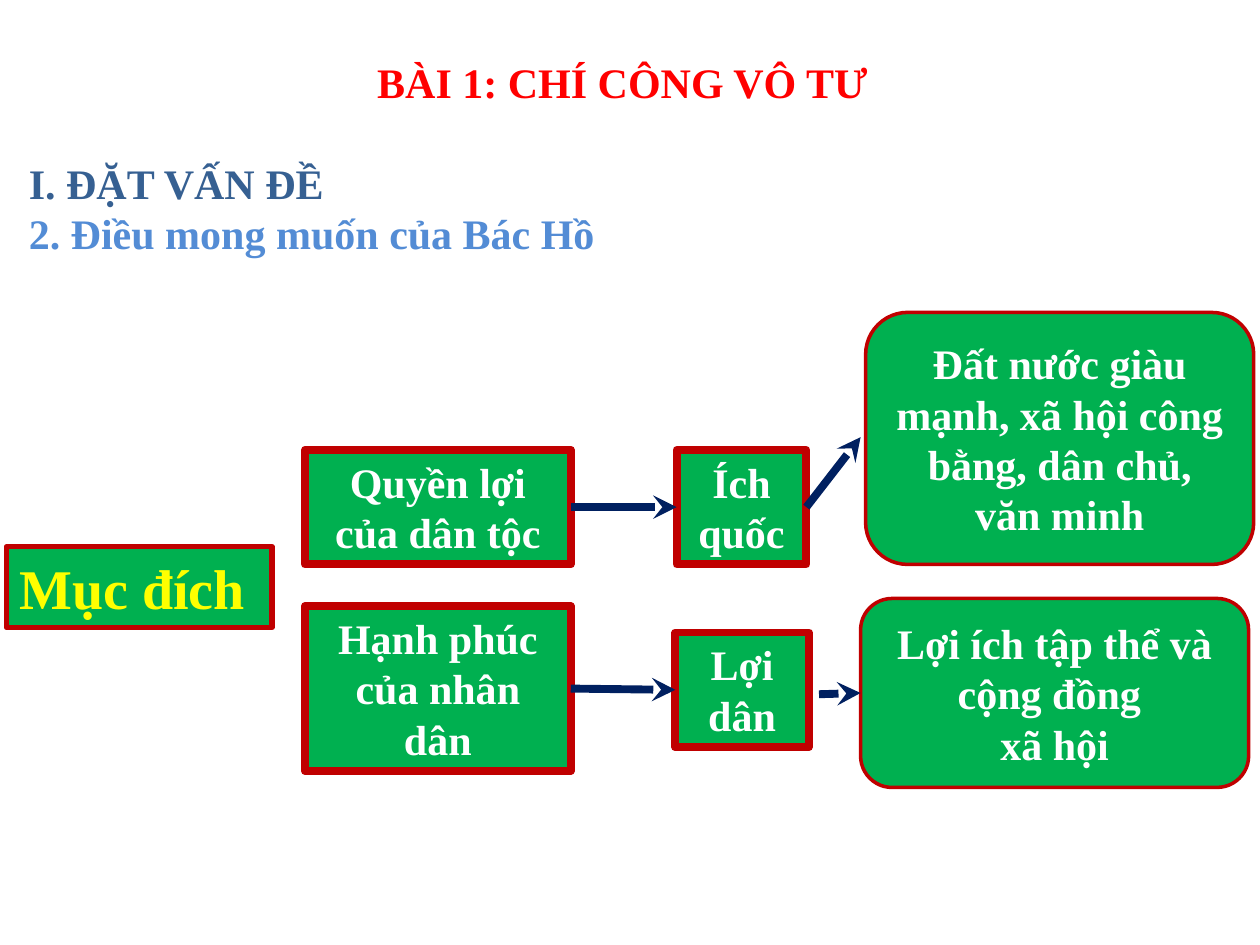
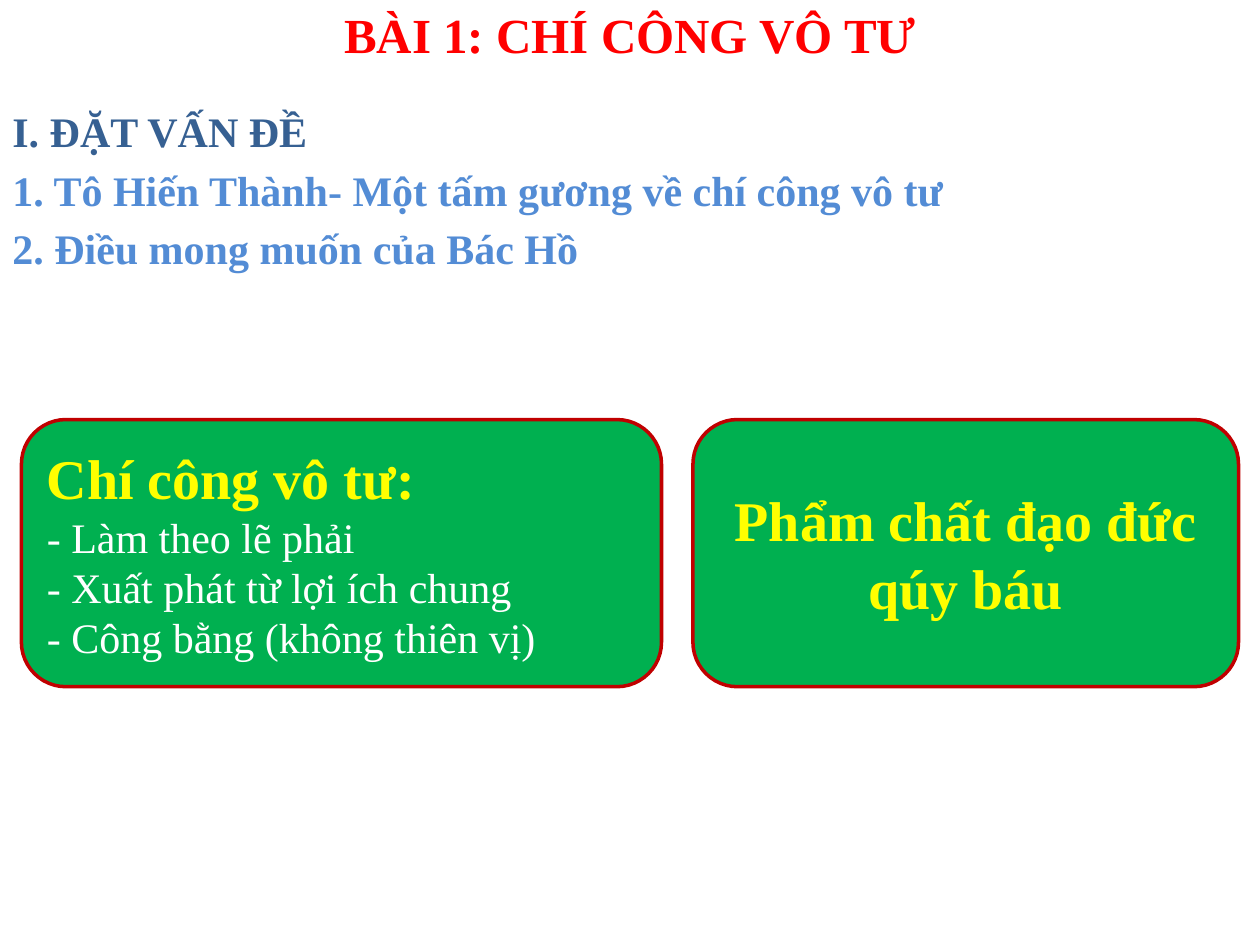
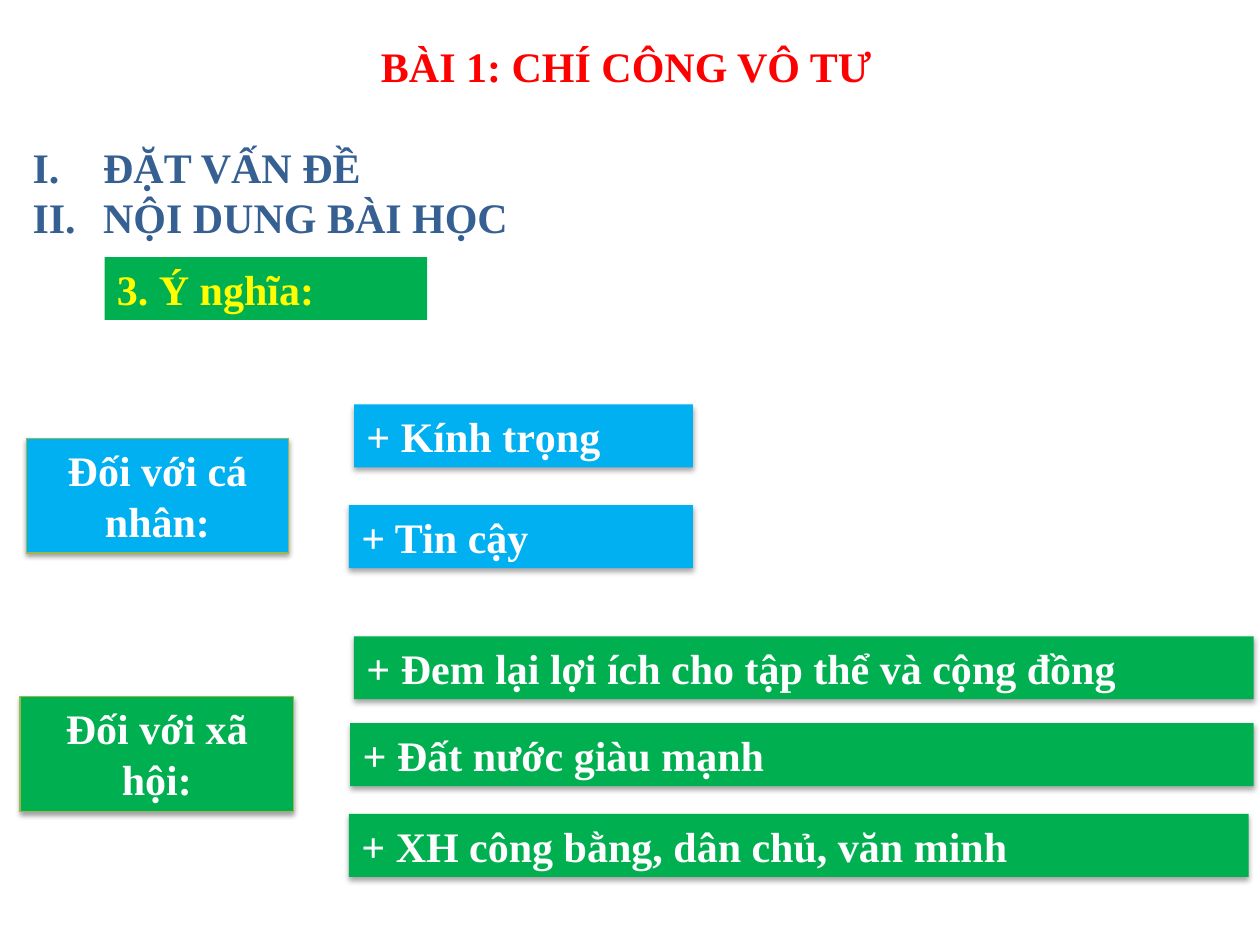
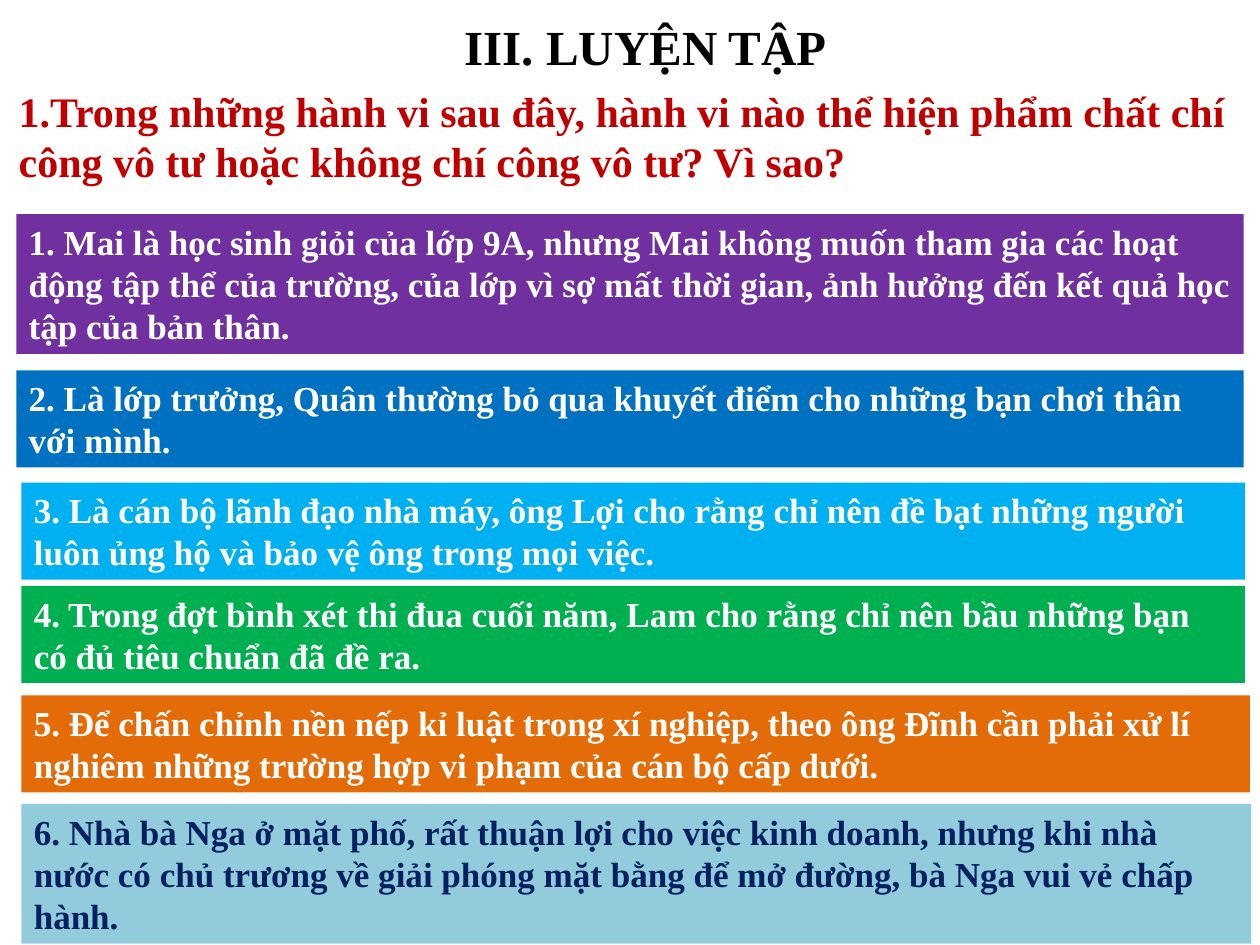
from dataclasses import dataclass
from typing import NamedTuple

from lxml.etree import SubElement
from pptx import Presentation
from pptx.dml.color import RGBColor
from pptx.enum.shapes import MSO_CONNECTOR as Connector, MSO_SHAPE as Preset
from pptx.enum.text import MSO_ANCHOR as Anchor, MSO_AUTO_SIZE as AutoSize, PP_ALIGN as Align
from pptx.oxml.ns import qn
from pptx.util import Emu, Inches, Pt

# Shared look
FONT = "Times New Roman"
COLORS = {
    "white": "FFFFFF", "black": "000000", "red": "FF0000", "crimson": "C00000",
    "yellow": "FFFF00", "green": "00B050", "sky": "00B0F0", "blue": "0070C0",
    "navy": "002060", "section": "366092", "topic": "538CD5", "olive": "97B853",
    "purple": "7030A0", "orange": "E36C09", "pale": "92CCDC",
}
SLIDE_WIDTH, SLIDE_HEIGHT = Inches(10), Inches(7.5)
COLUMNS, ROWS = 100, 75
COLUMN, ROW = SLIDE_WIDTH / COLUMNS, SLIDE_HEIGHT / ROWS
NUMBER_INDENT = Inches(0.56)
BLANK_LINE = 28.8  # height of one 24 pt line, in points
LESSON = "BÀI 1: CHÍ CÔNG VÔ TƯ"
PROBLEM = "ĐẶT VẤN ĐỀ"
WISH = "2. Điều mong muốn của Bác Hồ"


class Place(NamedTuple):
    """Left and width in columns, top and height in rows."""
    left: float
    top: float
    width: float
    height: float


class Point(NamedTuple):
    column: float
    row: float


class Outline(NamedTuple):
    color: str
    width: float


class Shadow(NamedTuple):
    distance: float
    opacity: int


@dataclass(frozen=True)
class Line:
    text: str
    color: str = "white"
    size: float = 24
    bold: bool = True
    align: Align = Align.LEFT
    space_before: float = 0
    numbered: bool = False


@dataclass(frozen=True)
class Box:
    place: Place
    lines: tuple[Line, ...]
    fill: str | None = "white"
    outline: Outline | None = None
    rounded: bool = False
    shadow: Shadow | None = None
    name: str = ""


@dataclass(frozen=True)
class Arrow:
    start: str | Point  # name of a box (its right side) or a free point
    end: str | Point    # name of a box (its left side) or a free point


THIN, MEDIUM, THICK = (Outline("crimson", width) for width in (2, 3, 4.5))
LABEL_EDGE = Outline("olive", 0.75)
LABEL_SHADOW, ITEM_SHADOW = Shadow(1.6, 38), Shadow(1.8, 35)


def rgb(name: str) -> RGBColor:
    return RGBColor.from_string(COLORS[name])


def across(columns: float) -> Emu:
    return Emu(round(columns * COLUMN))


def down(rows: float) -> Emu:
    return Emu(round(rows * ROW))


# Drawing
def add_number(paragraph) -> None:
    properties = paragraph._p.get_or_add_pPr()
    properties.set("marL", str(NUMBER_INDENT))
    properties.set("indent", str(-NUMBER_INDENT))
    color = SubElement(properties, qn("a:buClr"))
    SubElement(color, qn("a:srgbClr"), val=COLORS["section"])
    SubElement(properties, qn("a:buAutoNum"), type="romanUcPeriod")


def write_lines(text_frame, lines: tuple[Line, ...]) -> None:
    text_frame.text = "\n".join(line.text for line in lines)
    for paragraph, line in zip(text_frame.paragraphs, lines):
        paragraph.alignment = line.align
        paragraph.space_before = Pt(line.space_before)
        if line.numbered:
            add_number(paragraph)
        for run in paragraph.runs:
            run.font.name = FONT
            run.font.size = Pt(line.size)
            run.font.bold = line.bold
            run.font.color.rgb = rgb(line.color)


def add_shadow(shape, shadow: Shadow) -> None:
    effects = shape._element.spPr.find(qn("a:effectLst"))
    outer = SubElement(effects, qn("a:outerShdw"), blurRad=str(Pt(3.1)),
                       dist=str(Pt(shadow.distance)), dir="5400000", rotWithShape="0")
    color = SubElement(outer, qn("a:srgbClr"), val=COLORS["black"])
    SubElement(color, qn("a:alpha"), val=str(shadow.opacity * 1000))


def draw_box(slide, box: Box):
    left, top, width, height = box.place
    bounds = across(left), down(top), across(width), down(height)
    if box.fill is None:
        shape = slide.shapes.add_textbox(*bounds)
    else:
        preset = Preset.ROUNDED_RECTANGLE if box.rounded else Preset.RECTANGLE
        shape = slide.shapes.add_shape(preset, *bounds)
        shape.shadow.inherit = False
        shape.fill.solid()
        shape.fill.fore_color.rgb = rgb(box.fill)
        if box.outline:
            shape.line.color.rgb = rgb(box.outline.color)
            shape.line.width = Pt(box.outline.width)
        else:
            shape.line.fill.background()
        if box.shadow:
            add_shadow(shape, box.shadow)
    text_frame = shape.text_frame
    text_frame.word_wrap = True
    text_frame.auto_size = AutoSize.NONE if box.rounded else AutoSize.SHAPE_TO_FIT_TEXT
    text_frame.vertical_anchor = Anchor.MIDDLE if box.rounded else Anchor.TOP
    write_lines(text_frame, box.lines)
    return shape


def draw_arrow(slide, arrow: Arrow, shapes: dict) -> None:
    ends = [point if isinstance(point, Point) else Point(0, 0)
            for point in (arrow.start, arrow.end)]
    connector = slide.shapes.add_connector(
        Connector.STRAIGHT, *(length for point in ends
                              for length in (across(point.column), down(point.row))))
    if isinstance(arrow.start, str):
        connector.begin_connect(shapes[arrow.start], 3)
    if isinstance(arrow.end, str):
        connector.end_connect(shapes[arrow.end], 1)
    connector.line.color.rgb = rgb("navy")
    connector.line.width = Pt(4.5)
    properties = connector._element.spPr
    SubElement(properties.find(qn("a:ln")), qn("a:tailEnd"), type="stealth")
    SubElement(properties, qn("a:effectLst"))


def add_slide(presentation, boxes: list[Box], arrows: tuple[Arrow, ...] = ()) -> None:
    slide = presentation.slides.add_slide(presentation.slide_layouts[6])
    shapes = {box.name: draw_box(slide, box) for box in boxes}
    for arrow in arrows:
        draw_arrow(slide, arrow, shapes)


# Recurring kinds of box
def centered(text: str, color: str = "white", size: float = 24) -> Line:
    return Line(text, color, size, align=Align.CENTER)


def heading(place: Place, *lines: Line, size: float = 24) -> Box:
    return Box(place, (centered(LESSON, "red", size), *lines))


def step(name: str, place: Place, text: str) -> Box:
    return Box(place, (centered(text),), "green", THICK, name=name)


def card(place: Place, *lines: Line, name: str = "") -> Box:
    return Box(place, lines, "green", THIN, rounded=True, name=name)


def label(place: Place, text: str, fill: str) -> Box:
    return Box(place, (centered(text),), fill, LABEL_EDGE, shadow=LABEL_SHADOW)


def item(place: Place, text: str, fill: str) -> Box:
    return Box(place, (Line(text),), fill, shadow=ITEM_SHADOW)


def statement(place: Place, text: str, fill: str, color: str = "white") -> Box:
    return Box(place, (Line(text, color, 20),), fill)


# Slides
def add_purpose_slide(presentation) -> None:
    boxes = [
        heading(Place(1.3, 4, 96.2, 17.8),
                Line(f"I. {PROBLEM}", "section", space_before=BLANK_LINE),
                Line(WISH, "topic")),
        Box(Place(0.5, 43.4, 21.1, 6.4), (centered("Mục đích ", "yellow", 32),),
            "green", MEDIUM),
        step("nation", Place(24.2, 35.7, 21.1, 9.1), "Quyền lợi của dân tộc"),
        step("people", Place(24.2, 48.1, 21.1, 13.1), "Hạnh phúc của nhân dân"),
        step("country good", Place(53.7, 35.7, 10.3, 9.1), "Ích quốc"),
        step("people good", Place(53.6, 50.2, 10.6, 9.1), "Lợi dân"),
        card(Place(68.7, 24.8, 30.8, 20),
             centered("Đất nước giàu mạnh, xã hội công bằng, dân chủ, văn minh")),
        card(Place(68.3, 47.5, 30.8, 15),
             centered("Lợi ích tập thể và cộng đồng "), centered("xã hội"),
             name="community"),
    ]
    arrows = (
        Arrow("nation", "country good"),
        Arrow("people", "people good"),
        Arrow("country good", Point(68.3, 34.7)),
        Arrow(Point(65, 55.1), "community"),
    )
    add_slide(presentation, boxes, arrows)


def add_virtue_slide(presentation) -> None:
    traits = ("- Làm theo lẽ phải", "- Xuất phát từ lợi ích chung",
              "- Công bằng (không thiên vị)")
    add_slide(presentation, [
        card(Place(55, 33.3, 43.3, 21.2), centered("Phẩm chất đạo đức qúy báu", "yellow", 32)),
        card(Place(1.7, 33.3, 50.8, 21.2), Line("Chí công vô tư:", "yellow", 32),
             *(Line(trait, bold=False) for trait in traits)),
        Box(Place(0, 7.9, 30.8, 5), (Line(f"I. {PROBLEM}", "section"),)),
        heading(Place(0, -0.1, COLUMNS, 5.7), size=28),
        Box(Place(0, 12.6, COLUMNS, 5),
            (Line("1. Tô Hiến Thành- Một tấm gương về chí công vô tư", "topic"),)),
        Box(Place(0, 17.2, 60.6, 5), (Line(WISH, "topic"),)),
    ])


def add_meaning_slide(presentation) -> None:
    add_slide(presentation, [
        Box(Place(8.3, 20.4, 25.6, 5), (Line("3. Ý nghĩa:", "yellow"),), "green"),
        label(Place(2.1, 34.8, 20.8, 9.1), "Đối với cá nhân:", "sky"),
        item(Place(28.1, 32.1, 26.9, 5), "+ Kính trọng", "sky"),
        item(Place(27.7, 40.1, 27.3, 5), "+ Tin cậy", "sky"),
        label(Place(1.6, 55.3, 21.7, 9.1), "Đối với xã hội:", "green"),
        item(Place(28.1, 50.5, 71.4, 5), "+ Đem lại lợi ích cho tập thể và cộng đồng", "green"),
        item(Place(27.8, 57.4, 71.7, 5), "+ Đất nước giàu mạnh", "green"),
        item(Place(27.7, 64.6, 71.4, 5), "+ XH công bằng, dân chủ, văn minh", "green"),
        heading(Place(1.6, 2.7, 96.2, 17.2),
                Line(PROBLEM, "section", space_before=BLANK_LINE, numbered=True),
                Line("NỘI DUNG BÀI HỌC", "section", numbered=True)),
    ])


def add_practice_slide(presentation) -> None:
    add_slide(presentation, [
        Box(Place(34.6, 0.8, 33.3, 5.7), (centered("III. LUYỆN TẬP", "black", 28),), None),
        Box(Place(0.5, 6.3, 98.3, 9.1),
            (Line("1.Trong những hành vi sau đây, hành vi nào thể hiện phẩm chất chí "
                  "công vô tư hoặc không chí công vô tư? Vì sao?", "crimson"),), None),
        statement(Place(1.3, 17, 97.4, 11.1),
                  "1. Mai là học sinh giỏi của lớp 9A, nhưng Mai không muốn tham gia các "
                  "hoạt động tập thể của trường, của lớp vì sợ mất thời gian, ảnh hưởng "
                  "đến kết quả học tập của bản thân.", "purple"),
        statement(Place(1.3, 29.4, 97.4, 7.7),
                  "2. Là lớp trưởng, Quân thường bỏ qua khuyết điểm cho những bạn chơi "
                  "thân với mình.", "blue"),
        statement(Place(1.7, 38.3, 97.1, 7.7),
                  "3. Là cán bộ lãnh đạo nhà máy, ông Lợi cho rằng chỉ nên đề bạt những "
                  "người luôn ủng hộ và bảo vệ ông trong mọi việc.", "sky"),
        statement(Place(1.7, 46.5, 97.1, 7.7),
                  "4. Trong đợt bình xét thi đua cuối năm, Lam cho rằng chỉ nên bầu những "
                  "bạn có đủ tiêu chuẩn đã đề ra.", "green"),
        statement(Place(1.7, 55.2, 97.5, 7.7),
                  "5. Để chấn chỉnh nền nếp kỉ luật trong xí nghiệp, theo ông Đĩnh cần "
                  "phải xử lí nghiêm những trường hợp vi phạm của cán bộ cấp dưới.", "orange"),
        statement(Place(1.7, 63.8, 97.6, 11.1),
                  "6. Nhà bà Nga ở mặt phố, rất thuận lợi cho việc kinh doanh, nhưng khi "
                  "nhà nước có chủ trương về giải phóng mặt bằng để mở đường, bà Nga vui "
                  "vẻ chấp hành.", "pale", "navy"),
    ])


def main() -> None:
    presentation = Presentation()
    presentation.slide_width, presentation.slide_height = SLIDE_WIDTH, SLIDE_HEIGHT
    add_purpose_slide(presentation)
    add_virtue_slide(presentation)
    add_meaning_slide(presentation)
    add_practice_slide(presentation)
    presentation.save("out.pptx")


if __name__ == "__main__":
    main()
